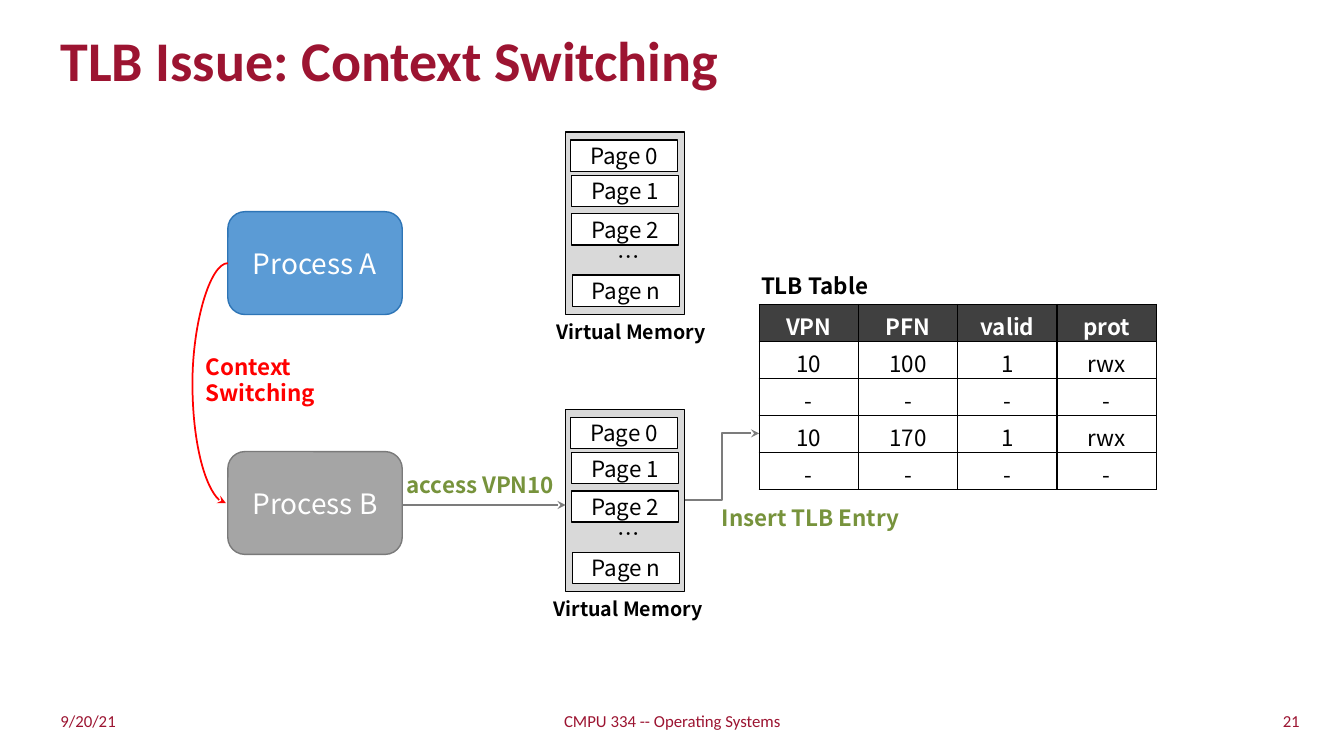
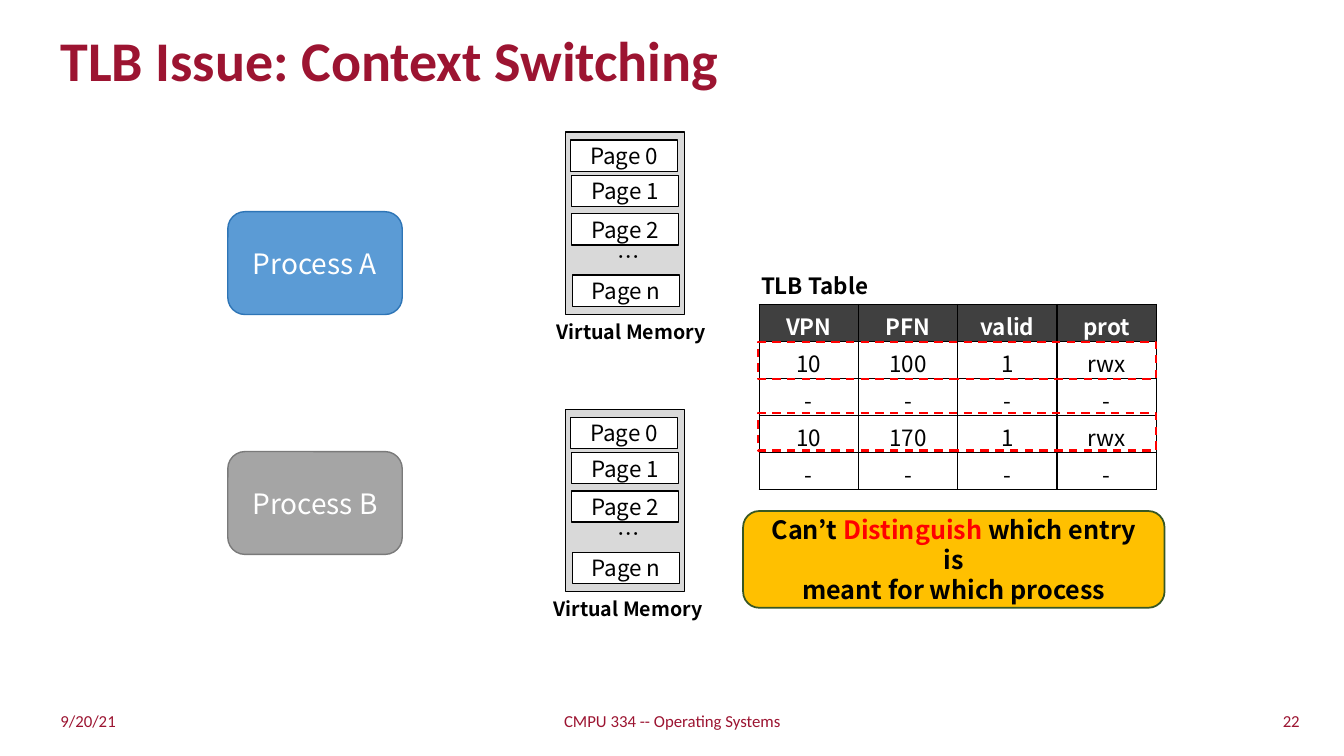
from lxml import etree
from pptx import Presentation
from pptx import util as u
from pptx.dml import color
from pptx.enum import dml, shapes, text
from pptx.oxml import ns

COLORS = {
    "title": "9C1431", "black": "000000", "white": "FFFFFF", "red": "FF0000",
    "green": "77933C", "arrow": "7C7C7C", "memory": "D9D9D9", "header": "404040",
    "blue": "5B9BD5", "blue_edge": "2E75B6", "gray": "A5A5A5", "gray_edge": "7A7A7A",
    "amber": "FFC000", "amber_edge": "385723",
}
BODY_FONT = "Noto Sans CJK KR"
TITLE_FONT = "Calibri"
LEFT, CENTER, RIGHT = text.PP_ALIGN.LEFT, text.PP_ALIGN.CENTER, text.PP_ALIGN.RIGHT
SHAPE, LINK = shapes.MSO_SHAPE, shapes.MSO_CONNECTOR
TLB_ROWS = [
    ("VPN", "PFN", "valid", "prot"),
    ("10", "100", "1", "rwx"),
    ("-", "-", "-", "-"),
    ("10", "170", "1", "rwx"),
    ("-", "-", "-", "-"),
]
PAGES = [("Page 0", 5, 8), ("Page 1", 6, 43), ("Page 2", 6, 81), ("Page n", 7, 142)]


def px(n):
    return u.Emu(n * 9144)


def rgb(name):
    return color.RGBColor.from_string(COLORS[name])


def sub(parent, tag, **attrs):
    return etree.SubElement(parent, ns.qn(tag), attrs)


def write(tf, lines, size=16, ink="black", bold=False, align=LEFT, font=BODY_FONT):
    for i, line in enumerate(lines):
        p = tf.add_paragraph() if i else tf.paragraphs[0]
        p.alignment = align
        for words, run_ink in [(line, ink)] if isinstance(line, str) else line:
            r = p.add_run()
            r.text = words
            r.font.size = u.Pt(size)
            r.font.bold = bold
            r.font.color.rgb = rgb(run_ink)
            r.font.name = font
            sub(r._r.get_or_add_rPr(), "a:ea", typeface=font)


def label(s, box, *lines, anchor=text.MSO_ANCHOR.TOP, **fmt):
    sp = s.shapes.add_textbox(*map(px, box))
    tf = sp.text_frame
    tf.word_wrap = True
    tf.vertical_anchor = anchor
    write(tf, lines, **fmt)
    return sp


def block(s, kind, box, *lines, fill=None, edge="black", width=1, inset=10, **fmt):
    sp = s.shapes.add_shape(kind, *map(px, box))
    sp.shadow.inherit = False
    if fill:
        sp.fill.solid()
        sp.fill.fore_color.rgb = rgb(fill)
    else:
        sp.fill.background()
    sp.line.color.rgb = rgb(edge)
    sp.line.width = u.Pt(width)
    tf = sp.text_frame
    tf.vertical_anchor = text.MSO_ANCHOR.MIDDLE
    tf.margin_left = tf.margin_right = px(inset)
    write(tf, lines, align=CENTER, **fmt)
    return sp


def arrow(s, kind, ends, ink="arrow", width=1.5, turn=0, bend=None):
    c = s.shapes.add_connector(kind, *map(px, ends))
    c.line.color.rgb = rgb(ink)
    c.line.width = u.Pt(width)
    props = c.element.spPr
    sub(c.line._get_or_add_ln(), "a:tailEnd", type="stealth")
    sub(props, "a:effectLst")
    if turn:
        props.xfrm.set("rot", str(turn * 60000))
    if bend:
        guides = props.find(ns.qn("a:prstGeom")).get_or_add_avLst()
        sub(guides, "a:gd", name="adj1", fmla=f"val {int(bend * 100000)}")


def new_slide(prs, title, number):
    s = prs.slides.add_slide(prs.slide_layouts[5])
    sp = s.shapes.title
    sp.left, sp.top, sp.width, sp.height = map(px, (50, 25, 1145, 75))
    tf = sp.text_frame
    tf.auto_size = text.MSO_AUTO_SIZE.NONE
    tf.vertical_anchor = text.MSO_ANCHOR.MIDDLE
    write(tf, [title], size=40, ink="title", bold=True, font=TITLE_FONT)
    tf.paragraphs[0].line_spacing = 0.9
    footer = [
        (50, 376, "9/20/21", LEFT),
        (442, 450, "CMPU 334 -- Operating Systems", CENTER),
        (923, 376, str(number), RIGHT),
    ]
    for x, w, words, align in footer:
        label(s, (x, 695, w, 40), words, size=12, ink="title", align=align,
              font=TITLE_FONT, anchor=text.MSO_ANCHOR.MIDDLE)
    return s


def processes(s, x, y):
    for i, (name, hue) in enumerate([("Process A", "blue"), ("Process B", "gray")]):
        block(s, SHAPE.ROUNDED_RECTANGLE, (x, y + 238 * i, 173, 102), name,
              fill=hue, edge=hue + "_edge", size=20, ink="white")


def memory(s, x, y, caption_x):
    block(s, SHAPE.RECTANGLE, (x, y, 118, 181), fill="memory")
    for name, dx, dy in PAGES:
        block(s, SHAPE.RECTANGLE, (x + dx, y + dy, 106, 31), name, fill="white", inset=0)
    label(s, (x + 42, y + 105, 116, 37), "…")
    label(s, (caption_x, y + 181, 192, 34), "Virtual Memory",
          size=14, bold=True, align=CENTER)


def border(cell):
    props = cell._tc.get_or_add_tcPr()
    for i, side in enumerate(("a:lnL", "a:lnR", "a:lnT", "a:lnB")):
        ln = etree.Element(ns.qn(side), w=str(u.Pt(1)))
        sub(sub(ln, "a:solidFill"), "a:srgbClr", val=COLORS["black"])
        props.insert(i, ln)


def tlb_table(s, x, y, w, h):
    heading = label(s, (x - 8, y - 37, 154, 37), "TLB Table", bold=True)
    heading.fill.solid()
    heading.fill.fore_color.rgb = rgb("white")
    rows, cols = len(TLB_ROWS), len(TLB_ROWS[0])
    tbl = s.shapes.add_table(rows, cols, px(x), px(y), px(w), px(h)).table
    tbl.horz_banding = False
    for col in tbl.columns:
        col.width = px(w) // cols
    for i, (row, values) in enumerate(zip(tbl.rows, TLB_ROWS)):
        row.height = px(h) // rows
        for cell, value in zip(row.cells, values):
            if i:
                cell.fill.background()
            else:
                cell.fill.solid()
                cell.fill.fore_color.rgb = rgb("header")
            border(cell)
            write(cell.text_frame, [value], bold=not i, align=CENTER,
                  ink="black" if i else "white")


def scene(prs, number):
    s = new_slide(prs, "TLB Issue: Context Switching", number)
    processes(s, 226, 210)
    memory(s, 561, 131, 530)
    memory(s, 561, 406, 527)
    tlb_table(s, 753, 302, 394, 183)
    return s


def switching_slide(prs):
    s = scene(prs, 21)
    arrow(s, LINK.STRAIGHT, (399, 501, 561, 501))
    arrow(s, LINK.ELBOW, (679, 496, 753, 430))
    arrow(s, LINK.CURVE, (224, 499, 226, 261), ink="red", width=1.25, turn=180, bend=17.5)
    label(s, (194, 345, 148, 64), "Context", "Switching", ink="red", bold=True)
    label(s, (367, 462, 219, 37), "access VPN10", ink="green", bold=True, align=CENTER)
    label(s, (706, 495, 219, 37), "Insert TLB Entry", ink="green", bold=True)


def conflict_slide(prs):
    s = scene(prs, 22)
    for y in (339, 410):
        frame = block(s, SHAPE.RECTANGLE, (752, y, 395, 37), edge="red", width=1.5)
        frame.line.dash_style = dml.MSO_LINE.DASH
    block(s, SHAPE.ROUNDED_RECTANGLE, (737, 507, 418, 96),
          [("Can’t ", "black"), ("Distinguish ", "red"), ("which entry is", "black")],
          "meant for which process",
          fill="amber", edge="amber_edge", width=1.25, inset=12, size=18, bold=True)


def main():
    prs = Presentation()
    prs.slide_width, prs.slide_height = px(1333), px(750)
    switching_slide(prs)
    conflict_slide(prs)
    prs.save("out.pptx")


if __name__ == "__main__":
    main()
